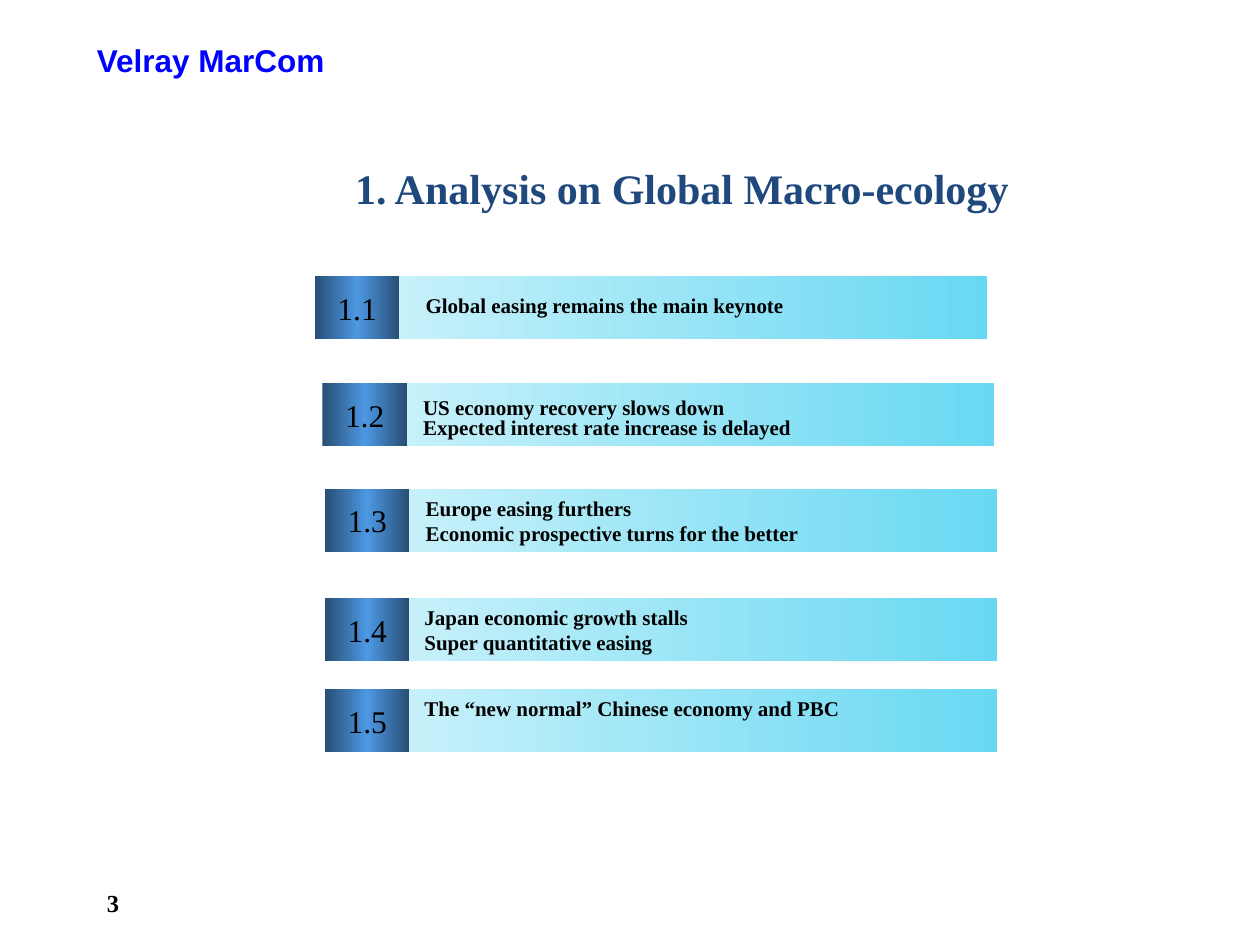
"""Build the agenda slide on the global macro-ecology."""
from copy import deepcopy

from pptx import Presentation
from pptx.dml.color import RGBColor
from pptx.enum.shapes import MSO_SHAPE
from pptx.enum.text import MSO_ANCHOR, PP_ALIGN
from pptx.oxml.ns import qn
from pptx.util import Inches, Pt

RECT = MSO_SHAPE.RECTANGLE
MIDDLE = MSO_ANCHOR.MIDDLE
CENTER = PP_ALIGN.CENTER
SERIF = "Times New Roman"


def write(shape, text, size, color="000000", bold=True, font=SERIF, space=None):
    frame = shape.text_frame
    frame.word_wrap = True
    frame.text = text
    for para in frame.paragraphs:
        para.line_spacing = space
        for run in para.runs:
            run.font.size = Pt(size)
            run.font.name = font
            run.font.bold = bold
            run.font.color.rgb = RGBColor.from_string(color)
    return frame


def block(left, top, width, colors):
    shape = slide.shapes.add_shape(RECT, Inches(left), Inches(top), Inches(width), Inches(0.5))
    shape.shadow.inherit = False
    shape.line.fill.background()
    shape.fill.gradient()
    shape.fill.gradient_angle = 0
    stops = shape._element.spPr.find(qn("a:gradFill")).find(qn("a:gsLst"))
    while len(stops) < len(colors):
        stops.append(deepcopy(stops[-1]))
    for i, stop in enumerate(shape.fill.gradient_stops):
        stop.position = i / (len(colors) - 1)
        stop.color.rgb = RGBColor.from_string(colors[i])
    return shape


deck = Presentation()
deck.slide_width, deck.slide_height = Inches(10), Inches(7.5)
slide = deck.slides.add_slide(deck.slide_layouts[6])
add_box = slide.shapes.add_textbox

header = add_box(Inches(0.67), Inches(0.33), Inches(4.58), Inches(0.34))
write(header, "Velray MarCom", 18, "0000FF", font="Arial", space=0.8).vertical_anchor = MIDDLE

title = add_box(Inches(2.72), Inches(1.24), Inches(5.44), Inches(0.91))
write(title, "1. Analysis on Global Macro-ecology", 24, "1F497D").word_wrap = False

number = add_box(Inches(0.75), Inches(7), Inches(2.08), Inches(0.33))
write(number, "3", 14)

# left and top of the row, then left, top, width, height and spacing of its text
rows = [
    (2.5, 2.19, 3.28, 2.27, 4.53, 0.3, None, "Global easing remains the main keynote"),
    (2.56, 3.04, 3.26, 3.12, 4.53, 0.42, 0.8,
     "US economy recovery slows down\nExpected interest rate increase is delayed"),
    (2.58, 3.88, 3.28, 3.88, 4.79, 0.5, None,
     "Europe easing furthers\nEconomic prospective turns for the better"),
    (2.58, 4.75, 3.27, 4.75, 4.79, 0.5, None,
     "Japan economic growth stalls\nSuper quantitative easing"),
    (2.58, 5.47, 3.27, 5.47, 4.79, 0.3, None, "The “new normal” Chinese economy and PBC"),
]
for i, (left, top, x, y, width, height, space, text) in enumerate(rows, 1):
    block(left + 0.58, top, 4.75, ["C8F1FA", "68D8F2"])
    badge = block(left, top, 0.67, ["284E75", "4D98E3", "284E75"])
    frame = write(badge, f"1.{i}", 18, bold=False)
    frame.word_wrap = False
    frame.vertical_anchor = MIDDLE
    frame.paragraphs[0].alignment = CENTER
    label = add_box(Inches(x), Inches(y), Inches(width), Inches(height))
    write(label, text, 12, space=space)

deck.save("out.pptx")
